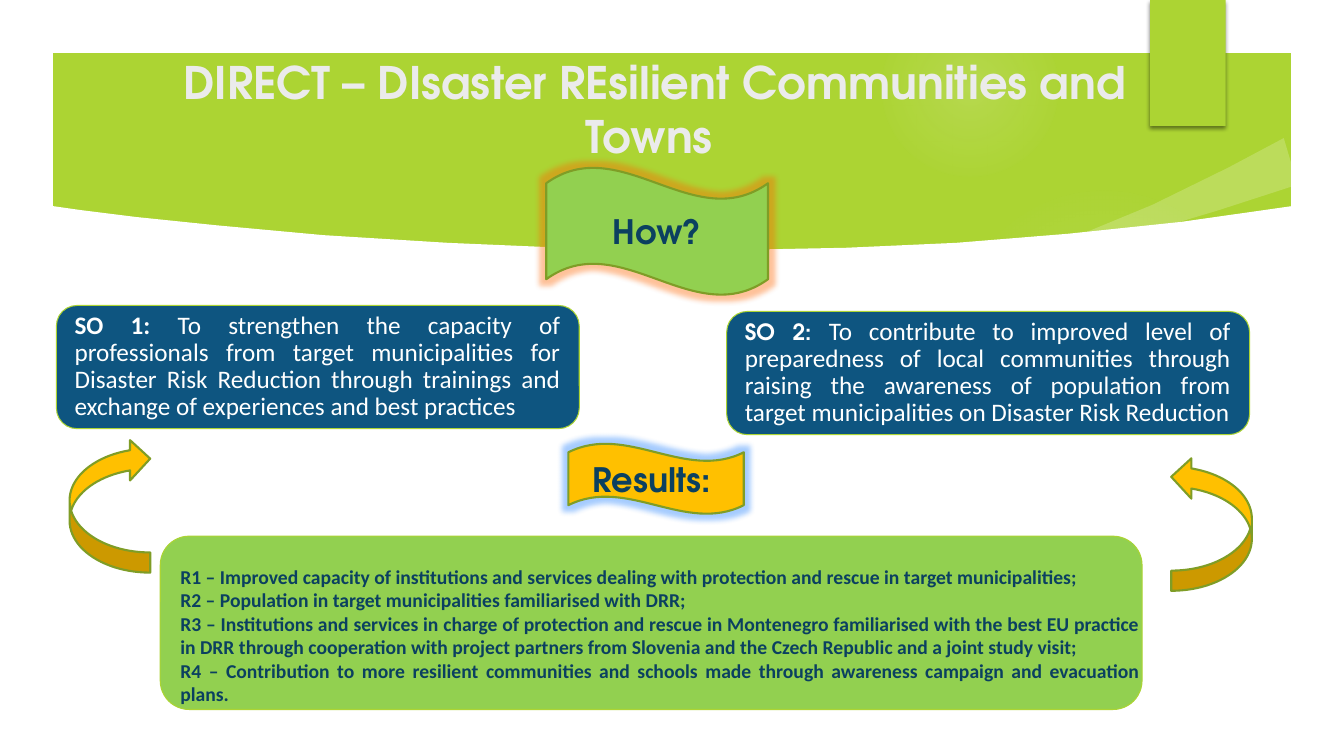
from pptx import Presentation
from pptx.dml.color import RGBColor
from pptx.enum.shapes import MSO_SHAPE
from pptx.enum.text import MSO_ANCHOR, MSO_AUTO_SIZE, PP_ALIGN
from pptx.oxml import parse_xml
from pptx.oxml.ns import nsdecls, qn
from pptx.util import Pt

GREEN, LIME, OLIVE = "ACD433", "92D050", "7F9D26"
BLUE, NAVY, AMBER, WHITE = "0E5580", "0B4060", "FFC000", "FFFFFF"
DISPLAY, BODY = "TeX Gyre Adventor", "Calibri"

FORMATS = {
    "title": dict(name=DISPLAY, size=Pt(32), bold=True, color="EBEBEB"),
    "banner": dict(name=DISPLAY, size=Pt(24), bold=True, color=NAVY),
    "objective": dict(name=BODY, size=Pt(18), bold=False, color=WHITE),
    "label": dict(name=BODY, size=Pt(18), bold=True, color=WHITE),
    "display label": dict(name=DISPLAY, size=Pt(16), bold=True, color=WHITE),
    "result": dict(name=BODY, size=Pt(14), bold=True, color=NAVY),
}


def rgb(value):
    return RGBColor.from_string(value)


def color_xml(value, alpha):
    return f'<a:srgbClr val="{value}"><a:alpha val="{alpha * 1000}"/></a:srgbClr>'


class SlideBuilder:
    def __init__(self, presentation):
        self.slide = presentation.slides.add_slide(presentation.slide_layouts[5])
        self.shapes = self.slide.shapes

    def background(self, color):
        fill = self.slide.background.fill
        fill.solid()
        fill.fore_color.rgb = rgb(color)

    def paint(self, shape, fill, line=None, width=1.5):
        shape.shadow.inherit = False
        shape.fill.solid()
        shape.fill.fore_color.rgb = rgb(fill)
        if line:
            shape.line.color.rgb = rgb(line)
            shape.line.width = Pt(width)
        else:
            shape.line.fill.background()

    def shape(self, kind, box, fill, line=None, width=1.5, shapes=None):
        shape = (shapes or self.shapes).add_shape(kind, *map(Pt, box))
        self.paint(shape, fill, line, width)
        return shape

    def outline(self, points, fill):
        corners = [(Pt(x), Pt(y)) for x, y in points]
        builder = self.shapes.build_freeform(*corners[0])
        builder.add_line_segments(corners[1:], close=True)
        shape = builder.convert_to_shape()
        self.paint(shape, fill)
        return shape

    def transparency(self, shape, color, alpha):
        fill = shape._element.spPr.find(qn("a:solidFill"))
        fill.getparent().replace(fill, parse_xml(
            f'<a:solidFill {nsdecls("a")}>{color_xml(color, alpha)}</a:solidFill>'))

    def light(self, box, stops):
        shape = self.shape(MSO_SHAPE.OVAL, box, WHITE)
        fill = shape._element.spPr.find(qn("a:solidFill"))
        stop_xml = "".join(f'<a:gs pos="{position * 1000}">{color_xml("F7F7F7", alpha)}</a:gs>'
                           for position, alpha in stops)
        fill.getparent().replace(fill, parse_xml(
            f'<a:gradFill {nsdecls("a")}><a:gsLst>{stop_xml}</a:gsLst><a:path path="circle">'
            '<a:fillToRect l="50000" t="50000" r="50000" b="50000"/></a:path></a:gradFill>'))

    def effect(self, shape, tag, color, alpha, **settings):
        attributes = " ".join(f'{name}="{value}"' for name, value in settings.items())
        shape._element.spPr.find(qn("a:effectLst")).append(parse_xml(
            f'<a:{tag} {nsdecls("a")} {attributes}>{color_xml(color, alpha)}</a:{tag}>'))

    def fill_text(self, shape, paragraphs, align, anchor=MSO_ANCHOR.MIDDLE, spacing=None):
        frame = shape.text_frame
        frame.word_wrap = True
        frame.vertical_anchor = anchor
        for index, runs in enumerate(paragraphs):
            paragraph = frame.add_paragraph() if index else frame.paragraphs[0]
            paragraph.alignment = align
            if spacing:
                paragraph.line_spacing = spacing
            for text, style in runs:
                run = paragraph.add_run()
                run.text = text
                for name, value in FORMATS[style].items():
                    if name == "color":
                        run.font.color.rgb = rgb(value)
                    else:
                        setattr(run.font, name, value)

    def title(self, box, text):
        title = self.shapes.title
        title.left, title.top, title.width, title.height = map(Pt, box)
        self.shapes._spTree.append(title._element)  # in front of the backdrop
        self.fill_text(title, [[(text, "title")]], PP_ALIGN.CENTER)
        title.text_frame.auto_size = MSO_AUTO_SIZE.NONE

    def banner(self, box, text, fill, glow):
        wave = self.shape(MSO_SHAPE.WAVE, box, fill, OLIVE)
        self.effect(wave, "glow", glow, 40, rad=Pt(8))
        self.fill_text(wave, [[(text, "banner")]], PP_ALIGN.CENTER)

    def panel(self, box, inner_box, fill):
        group = self.shapes.add_group_shape()
        self.shape(MSO_SHAPE.ROUNDED_RECTANGLE, box, fill, GREEN, 0.75, group.shapes)
        return self.shape(MSO_SHAPE.RECTANGLE, inner_box, fill, shapes=group.shapes)

    def objective(self, left, top, runs):
        inner = self.panel((left, top, 373.5, 88), (left + 5, top + 4.3, 363, 79.2), BLUE)
        frame = inner.text_frame
        for side in ("left", "top", "right", "bottom"):
            setattr(frame, f"margin_{side}", Pt(8))
        self.fill_text(inner, [runs], PP_ALIGN.JUSTIFY, spacing=0.9)

    def text(self, box, paragraphs):
        text_box = self.shapes.add_textbox(*map(Pt, box))
        self.fill_text(text_box, paragraphs, PP_ALIGN.JUSTIFY, MSO_ANCHOR.TOP)

    def arrow(self, kind, left, top):
        self.shape(kind, (left, top, 57.6, 95.8), AMBER, OLIVE).rotation = 180


def main():
    presentation = Presentation()
    presentation.slide_width, presentation.slide_height = Pt(960), Pt(540)
    builder = SlideBuilder(presentation)

    # Backdrop: green band with soft lights, a pale streak and a white frame
    builder.background(GREEN)
    builder.light((677.5, 131.8, 221.8, 221.8), [(0, 7), (36, 6), (69, 0), (100, 0)])
    builder.light((630, 0, 126, 126), [(0, 14), (36, 7), (73, 0), (100, 0)])
    streak = builder.outline(
        [(672.5, 180), (722, 178), (793.5, 171.5), (868.5, 162.5), (928, 154), (924, 119.5),
         (881.5, 133.5), (823.5, 150.5), (765.5, 163.5), (712, 171.5), (669.5, 175)], WHITE)
    streak.rotation = 350.2
    builder.transparency(streak, WHITE, 20)
    builder.outline(
        [(36, 147), (57, 150), (97, 155), (155, 161), (231, 168), (320, 173.5), (402.5, 177),
         (473, 178.5), (528, 178.5), (604.5, 177), (683, 173.5), (763, 167), (844, 158.5),
         (924.5, 147), (924.5, 504), (36, 504)], WHITE)
    frame = builder.shape(MSO_SHAPE.FRAME, (0, 0, 960, 540), WHITE)
    frame.adjustments[0] = 0.07
    tab = builder.shape(MSO_SHAPE.RECTANGLE, (821.5, 0, 54, 90), GREEN)
    builder.effect(tab, "outerShdw", "000000", 45, blurRad=Pt(3), dist=Pt(2), dir=5400000)

    # Title and objectives
    builder.title((123, 49.7, 690, 55.4), "DIRECT – DIsaster REsilient Communities and Towns ")
    builder.banner((390.2, 119.5, 158.4, 91.4), "How?", LIME, "FF6600")
    builder.objective(40.3, 218.2, [
        ("SO 1: ", "label"),
        ("To strengthen the capacity of professionals from target municipalities for Disaster "
         "Risk Reduction through trainings and exchange of experiences and best practices ",
         "objective")])
    builder.objective(519.1, 222.5, [
        ("SO 2: ", "display label"),
        ("To contribute to improved level of preparedness of local communities through raising "
         "the awareness of population from target municipalities on Disaster Risk Reduction",
         "objective")])

    # Results
    builder.panel((114.5, 383, 701.3, 123.8), (128.2, 388, 681, 111.6), LIME)
    builder.banner((406, 316.8, 125.3, 50.4), "Results: ", AMBER, "2080FF")
    results = [
        "R1 – Improved capacity of institutions and services dealing with protection and rescue "
        "in target municipalities; ",
        "R2 – Population in target municipalities familiarised with DRR;",
        "R3 – Institutions and services in charge of protection and rescue in Montenegro "
        "familiarised with the best EU practice in DRR through cooperation with project partners "
        "from Slovenia and the Czech Republic and a joint study visit; ",
        "R4 – Contribution to more resilient communities and schools made through awareness "
        "campaign and evacuation plans. ",
    ]
    builder.text((121.7, 399.6, 699.8, 108.7), [[(result, "result")] for result in results])

    # Arrows from the results up to the objectives
    builder.arrow(MSO_SHAPE.CURVED_RIGHT_ARROW, 836.6, 326.2)
    builder.arrow(MSO_SHAPE.CURVED_LEFT_ARROW, 49.7, 313.2)

    presentation.save("out.pptx")


if __name__ == "__main__":
    main()
